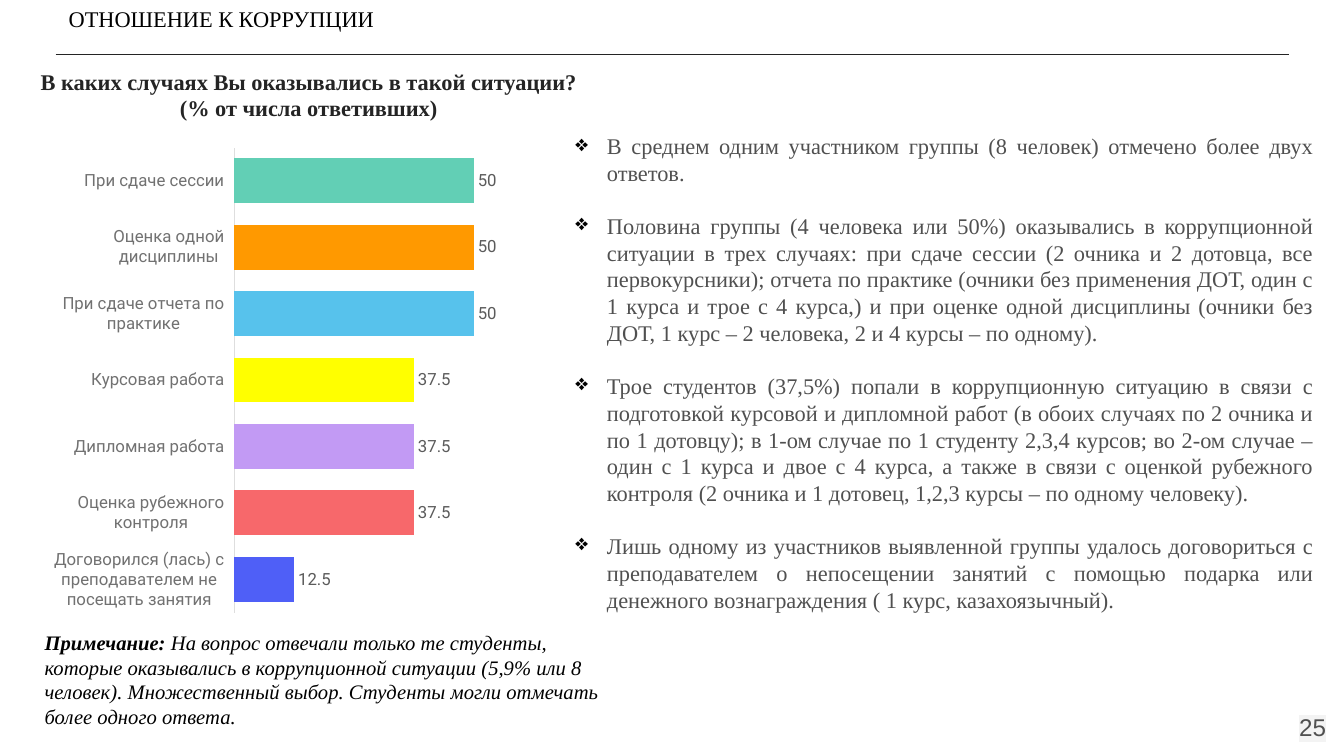
from lxml.etree import SubElement
from pptx import Presentation
from pptx.chart.data import CategoryChartData
from pptx.dml.color import RGBColor
from pptx.enum.chart import XL_CHART_TYPE, XL_LABEL_POSITION, XL_TICK_LABEL_POSITION, XL_TICK_MARK
from pptx.enum.shapes import MSO_CONNECTOR
from pptx.enum.text import MSO_ANCHOR, PP_ALIGN
from pptx.oxml import parse_xml
from pptx.oxml.ns import nsdecls, qn
from pptx.util import Pt

PX = 9525
SERIF = "Times New Roman"
BLACK = RGBColor(0x00, 0x00, 0x00)
INK = RGBColor(0x24, 0x24, 0x24)
GREY = RGBColor(0x50, 0x50, 0x50)
LABEL_GREY = RGBColor(0x5B, 0x5B, 0x5B)
AXIS_GREY = RGBColor(0x71, 0x71, 0x71)
AXIS_LINE = RGBColor(0xDE, 0xDE, 0xDE)
BLUE = RGBColor(0x4F, 0x5F, 0xF7)
RED = RGBColor(0xF7, 0x68, 0x6B)
VIOLET = RGBColor(0xC2, 0x9A, 0xF4)
YELLOW = RGBColor(0xFF, 0xFF, 0x00)
SKY = RGBColor(0x57, 0xC2, 0xEC)
ORANGE = RGBColor(0xFF, 0x99, 0x00)
GREEN = RGBColor(0x62, 0xCF, 0xB5)

CASES = [
    ("Договорился (лась) с преподавателем не посещать занятия", 12.5, BLUE),
    ("Оценка рубежного контроля", 37.5, RED),
    ("Дипломная работа", 37.5, VIOLET),
    ("Курсовая работа", 37.5, YELLOW),
    ("При сдаче отчета по практике", 50, SKY),
    ("Оценка одной дисциплины", 50, ORANGE),
    ("При сдаче сессии", 50, GREEN),
]

FINDINGS = [
    "В среднем одним участником группы (8 человек) отмечено более двух ответов.",
    "Половина группы (4 человека или 50%) оказывались в коррупционной ситуации в трех "
    "случаях: при сдаче сессии (2 очника и 2 дотовца, все первокурсники); отчета по практике "
    "(очники без применения ДОТ, один с 1 курса и трое с 4 курса,) и при оценке одной "
    "дисциплины (очники без ДОТ, 1 курс – 2 человека, 2 и 4 курсы – по одному).",
    "Трое студентов (37,5%) попали в коррупционную ситуацию в связи с подготовкой курсовой и "
    "дипломной работ (в обоих случаях по 2 очника и по 1 дотовцу); в 1-ом случае по 1 студенту "
    "2,3,4 курсов; во 2-ом случае – один с 1 курса и двое с 4 курса, а также в связи с оценкой "
    "рубежного контроля (2 очника и 1 дотовец, 1,2,3 курсы – по одному человеку).",
    "Лишь одному из участников выявленной группы удалось договориться с преподавателем о "
    "непосещении занятий с помощью подарка или денежного вознаграждения "
    "( 1 курс, казахоязычный).",
]

NOTE_LEAD = "Примечание:"
NOTE = (" На вопрос отвечали только те студенты, которые оказывались в коррупционной ситуации "
        "(5,9% или 8 человек). Множественный выбор. Студенты могли отмечать более одного ответа.")


def set_font(font, size, color, name=SERIF):
    font.size, font.name = Pt(size), name
    font.color.rgb = color


def add_text(s, box, paragraphs, size, color, name=SERIF, align=PP_ALIGN.LEFT,
             anchor=MSO_ANCHOR.TOP, inset=None):
    tf = s.shapes.add_textbox(*(v * PX for v in box)).text_frame
    tf.word_wrap = True
    tf.vertical_anchor = anchor
    if inset is not None:
        tf.margin_left = tf.margin_right = tf.margin_top = tf.margin_bottom = inset * PX
    for i, text in enumerate(paragraphs):
        p = tf.add_paragraph() if i else tf.paragraphs[0]
        p.text = text
        p.alignment = align
        set_font(p.font, size, color, name)
    return tf


def add_bullet(p, indent):
    pPr = p.font._element.getparent()
    pPr.set("marL", str(indent * PX))
    pPr.set("indent", str(-indent * PX))
    for xml in (f'<a:buClr {nsdecls("a")}><a:srgbClr val="{BLACK}"/></a:buClr>',
                f'<a:buChar {nsdecls("a")} char="❖"/>'):
        p.font._element.addprevious(parse_xml(xml))


def add_rule(s, x1, x2, y):
    rule = s.shapes.add_connector(MSO_CONNECTOR.STRAIGHT, x1 * PX, y * PX, x2 * PX, y * PX)
    rule.line.color.rgb = INK
    rule.line.width = Pt(0.75)
    SubElement(rule._element.spPr, qn("a:effectLst"))


def set_plot_layout(chart, **place):
    area = chart._chartSpace.chart.plotArea
    for old in area.findall(qn("c:layout")):
        area.remove(old)
    sizes = "".join(f'<c:{k} val="{v}"/>' for k, v in place.items())
    area.insert(0, parse_xml(
        f'<c:layout {nsdecls("c")}><c:manualLayout><c:layoutTarget val="inner"/>'
        f'<c:xMode val="edge"/><c:yMode val="edge"/>{sizes}</c:manualLayout></c:layout>'))


def add_case_chart(s, box):
    names, values, colors = zip(*CASES)
    data = CategoryChartData()
    data.categories = names
    data.add_series("Series 1", values)
    chart = s.shapes.add_chart(XL_CHART_TYPE.BAR_CLUSTERED, *(v * PX for v in box), data).chart
    chart.has_legend = chart.has_title = False
    set_font(chart.font, 10, INK, "Arial")
    set_plot_layout(chart, x=0.41, y=0.01, w=0.59, h=0.98)

    cases = chart.category_axis
    cases.major_tick_mark = XL_TICK_MARK.NONE
    cases.tick_label_position = XL_TICK_LABEL_POSITION.LOW
    set_font(cases.tick_labels.font, 12, AXIS_GREY, "Roboto")
    cases.format.line.color.rgb = AXIS_LINE
    cases.format.line.width = Pt(0.75)
    shares = chart.value_axis
    shares.minimum_scale, shares.maximum_scale = 0, 60
    shares.has_major_gridlines = shares.visible = False

    plot = chart.plots[0]
    plot.gap_width = 48
    plot.vary_by_categories = False
    plot.has_data_labels = True
    labels = plot.data_labels
    labels.show_value = True
    labels.position = XL_LABEL_POSITION.OUTSIDE_END
    set_font(labels.font, 12, LABEL_GREY, "Roboto")
    for i, color in enumerate(colors):
        fill = plot.series[0].points[i].format.fill
        fill.solid()
        fill.fore_color.rgb = color


def add_findings(s, box):
    tf = add_text(s, box, FINDINGS, 16, GREY, align=PP_ALIGN.JUSTIFY, inset=12)
    for p in tf.paragraphs:
        add_bullet(p, 30)
    for p in tf.paragraphs[:-1]:
        p.space_after = Pt(18.4)


def add_note(s, box):
    p = add_text(s, box, [NOTE_LEAD], 14.7, BLACK).paragraphs[0]
    p.font.italic = True
    p.runs[0].font.bold = True
    r = p.add_run()
    r.text = NOTE


def add_page_number(s, box, number):
    tf = add_text(s, box, [number], 17.3, GREY, "Arial", PP_ALIGN.RIGHT, MSO_ANCHOR.MIDDLE, 12)
    rPr = tf.paragraphs[0].runs[0].font._element
    rPr.append(parse_xml(f'<a:highlight {nsdecls("a")}><a:srgbClr val="F3F3F3"/></a:highlight>'))


def main():
    prs = Presentation()
    prs.slide_width, prs.slide_height = 1280 * PX, 720 * PX
    s = prs.slides.add_slide(prs.slide_layouts[6])
    add_rule(s, 53, 1228, 52)
    title = add_text(s, (18, 54, 552, 72),
                     ["В каких случаях Вы оказывались в такой ситуации?\v(% от числа ответивших)"],
                     16, INK, align=PP_ALIGN.CENTER, anchor=MSO_ANCHOR.MIDDLE, inset=10)
    title.paragraphs[0].font.bold = True
    add_page_number(s, (1198, 665, 77, 55), "25")
    add_findings(s, (536, 114, 727, 569))
    add_note(s, (33, 595, 574, 105))
    add_text(s, (56, 0, 1142, 36), ["ОТНОШЕНИЕ К КОРРУПЦИИ"], 16, BLACK)
    add_case_chart(s, (33, 136, 464, 452))
    prs.save("out.pptx")


if __name__ == "__main__":
    main()
